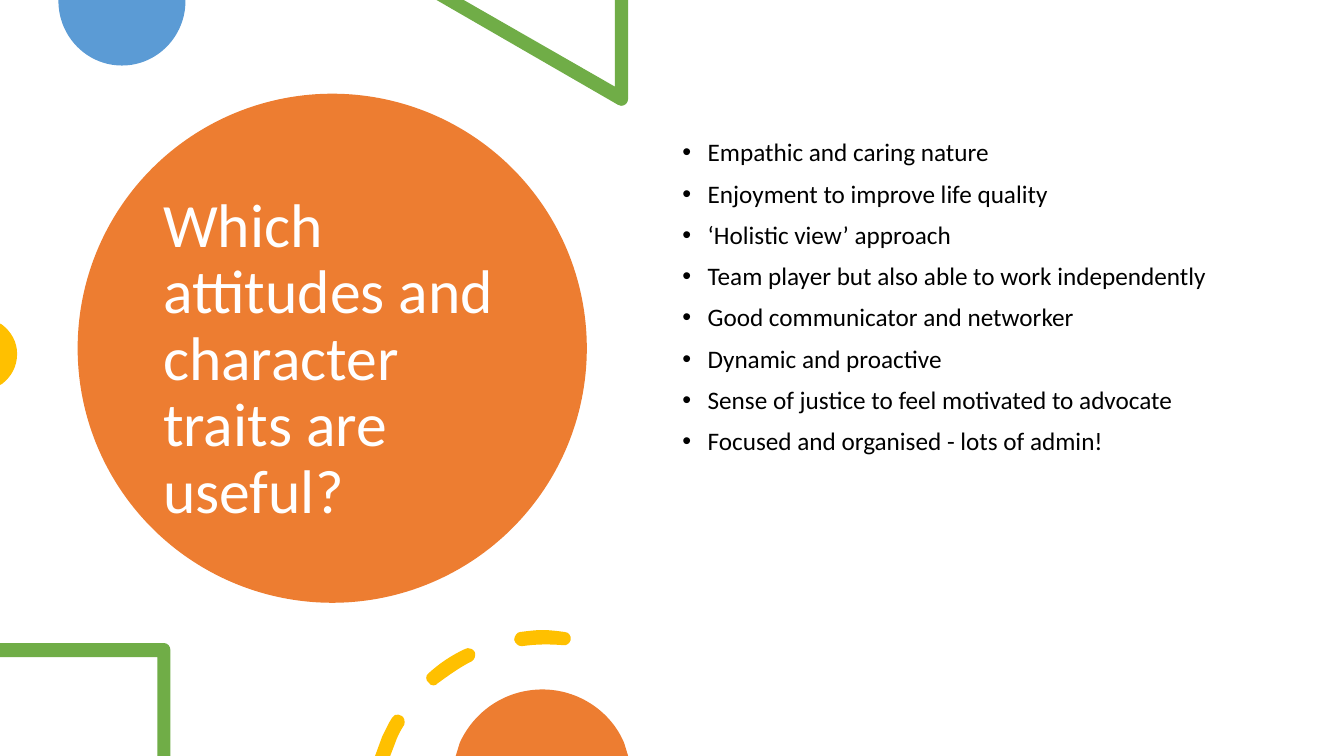
import pptx
import pptx.dml.color
import pptx.enum.shapes
import pptx.enum.text
import pptx.oxml
import pptx.oxml.ns
import pptx.util
from pptx.util import Inches

FONT = "Calibri"
COLOURS = {
    "orange": "ED7D31", "blue": "5B9BD5", "green": "70AD47",
    "yellow": "FFC000", "white": "FFFFFF", "black": "000000",
}

TITLE = "Which attitudes and character traits are useful?"
TRAITS = [
    "Empathic and caring nature",
    "Enjoyment to improve life quality",
    "‘Holistic view’ approach",
    "Team player but also able to work independently",
    "Good communicator and networker",
    "Dynamic and proactive",
    "Sense of justice to feel motivated to advocate",
    "Focused and organised - lots of admin!",
]

# left, top, width, height in inches
TITLE_CIRCLE = (0.77, 0.93, 5.05, 5.05)
TITLE_BOX = (1.52, 1.35, 3.54, 4.45)
TRAITS_BOX = (6.67, 0.9, 5.75, 5.35)
TRAITS_TOP_MARGIN = 0.49

# Outlines in inches: a pair is a corner, six numbers are a Bezier curve
# (two control points, then the end point).
BLUE_DISC = [(1.84, 0), (0.58, 0), (0.58, 0.01),
             (0.58, 0.36, 0.86, 0.65, 1.21, 0.65),
             (1.56, 0.65, 1.84, 0.36, 1.84, 0.01)]
GREEN_TRIANGLE = [(6.23, 0), (6.1, 0), (6.1, 0.86), (4.6, 0), (4.33, 0),
                  (6.13, 1.04), (6.14, 1.05, 6.15, 1.05, 6.16, 1.05),
                  (6.2, 1.05, 6.23, 1.02, 6.23, 0.98)]
YELLOW_DISC = [(0, 3.21), (0, 3.82), (0.02, 3.81),
               (0.11, 3.74, 0.17, 3.64, 0.17, 3.51),
               (0.17, 3.39, 0.11, 3.29, 0.02, 3.22)]
GREEN_SQUARE = [(1.63, 6.38), (0, 6.38), (0, 6.52), (1.56, 6.52), (1.56, 7.5),
                (1.69, 7.5), (1.69, 6.45), (1.69, 6.41, 1.66, 6.38, 1.63, 6.38)]
LOW_DASH = [(3.95, 7.09), (3.93, 7.08, 3.9, 7.1, 3.89, 7.12),
            (3.85, 7.18, 3.82, 7.25, 3.79, 7.31), (3.72, 7.5), (3.87, 7.5),
            (3.92, 7.37), (3.94, 7.31, 3.97, 7.25, 4.01, 7.19),
            (4.02, 7.16, 4.01, 7.11, 3.98, 7.1),
            (3.97, 7.09, 3.96, 7.09, 3.95, 7.09)]
MIDDLE_DASH = [(4.64, 6.43), (4.63, 6.43, 4.62, 6.43, 4.61, 6.44),
               (4.48, 6.5, 4.36, 6.58, 4.25, 6.68),
               (4.22, 6.7, 4.22, 6.75, 4.25, 6.77),
               (4.26, 6.79, 4.28, 6.8, 4.3, 6.8),
               (4.32, 6.8, 4.33, 6.79, 4.34, 6.78),
               (4.45, 6.7, 4.56, 6.62, 4.68, 6.56),
               (4.71, 6.54, 4.72, 6.5, 4.71, 6.47),
               (4.69, 6.44, 4.67, 6.43, 4.64, 6.43)]
TOP_DASH = [(5.38, 6.25), (5.31, 6.25, 5.24, 6.26, 5.16, 6.27),
            (5.13, 6.27, 5.1, 6.31, 5.1, 6.35),
            (5.11, 6.38, 5.14, 6.41, 5.17, 6.41),
            (5.18, 6.41, 5.18, 6.41, 5.18, 6.41),
            (5.32, 6.39, 5.45, 6.39, 5.58, 6.4),
            (5.62, 6.41, 5.65, 6.38, 5.66, 6.35),
            (5.67, 6.31, 5.64, 6.27, 5.6, 6.27),
            (5.53, 6.26, 5.45, 6.25, 5.38, 6.25)]
ORANGE_DISC = [(5.38, 6.84), (5.01, 6.84, 4.7, 7.06, 4.56, 7.37), (4.52, 7.5),
               (6.23, 7.5), (6.19, 7.37), (6.06, 7.06, 5.74, 6.84, 5.38, 6.84)]

UPPER_DECORATIONS = [
    ("blue", [BLUE_DISC]),
    ("green", [GREEN_TRIANGLE]),
    ("yellow", [YELLOW_DISC]),
]
LOWER_DECORATIONS = [
    ("green", [GREEN_SQUARE]),
    ("yellow", [LOW_DASH, MIDDLE_DASH, TOP_DASH]),
    ("orange", [ORANGE_DISC]),
]


def rgb(colour):
    return pptx.dml.color.RGBColor.from_string(COLOURS[colour])


def paint(shape, colour):
    shape.shadow.inherit = False
    shape.fill.solid()
    shape.fill.fore_color.rgb = rgb(colour)
    shape.line.fill.background()


def bend_segments(shape, steps):
    """Turn the straight segments whose step has six numbers into curves."""
    qn = pptx.oxml.ns.qn
    segments = list(shape._element.iter(qn("a:lnTo")))
    for segment, step in zip(segments, steps):
        if len(step) == 6:
            curve = pptx.oxml.parse_xml(
                f'<a:cubicBezTo {pptx.oxml.ns.nsdecls("a")}/>')
            for x, y in zip(step[::2], step[1::2]):
                point = curve.makeelement(qn("a:pt"))
                point.set("x", str(Inches(x) - shape.left))
                point.set("y", str(Inches(y) - shape.top))
                curve.append(point)
            segment.getparent().replace(segment, curve)


def add_decorations(slide, decorations):
    for colour, outlines in decorations:
        builder = slide.shapes.build_freeform(*map(Inches, outlines[0][0]))
        for number, outline in enumerate(outlines):
            start, *ends = [tuple(map(Inches, step[-2:])) for step in outline]
            if number:
                builder.move_to(*start)
            builder.add_line_segments(ends, close=True)
        shape = builder.convert_to_shape()
        bend_segments(shape, [step for outline in outlines for step in outline[1:]])
        paint(shape, colour)


def add_text(slide, box, lines, size, colour):
    """Add a text box with one paragraph for each line; return its frame."""
    frame = slide.shapes.add_textbox(*map(Inches, box)).text_frame
    frame.word_wrap = True
    for number, line in enumerate(lines):
        paragraph = frame.add_paragraph() if number else frame.paragraphs[0]
        paragraph.line_spacing = 0.9
        run = paragraph.add_run()
        run.text = line
        run.font.name = FONT
        run.font.size = pptx.util.Pt(size)
        run.font.color.rgb = rgb(colour)
    return frame


def add_bullet(paragraph):
    properties = paragraph._p.get_or_add_pPr()
    properties.set("marL", str(Inches(0.25)))
    properties.set("indent", str(Inches(-0.25)))
    namespace = pptx.oxml.ns.nsdecls("a")
    for tag in ('buFont {} typeface="Arial"', 'buChar {} char="•"'):
        properties.append(pptx.oxml.parse_xml(f"<a:{tag.format(namespace)}/>"))


def main():
    presentation = pptx.Presentation()
    presentation.slide_width = Inches(13.33)
    presentation.slide_height = Inches(7.5)
    slide = presentation.slides.add_slide(presentation.slide_layouts[6])

    circle = slide.shapes.add_shape(
        pptx.enum.shapes.MSO_SHAPE.OVAL, *map(Inches, TITLE_CIRCLE))
    paint(circle, "orange")
    title = add_text(slide, TITLE_BOX, [TITLE], 44, "white")
    title.vertical_anchor = pptx.enum.text.MSO_ANCHOR.MIDDLE
    add_decorations(slide, UPPER_DECORATIONS)

    traits = add_text(slide, TRAITS_BOX, TRAITS, 18, "black")
    traits.margin_top = Inches(TRAITS_TOP_MARGIN)
    for number, trait in enumerate(traits.paragraphs):
        trait.space_before = pptx.util.Pt(10 if number else 0)
        add_bullet(trait)
    add_decorations(slide, LOWER_DECORATIONS)

    presentation.save("out.pptx")


if __name__ == "__main__":
    main()
